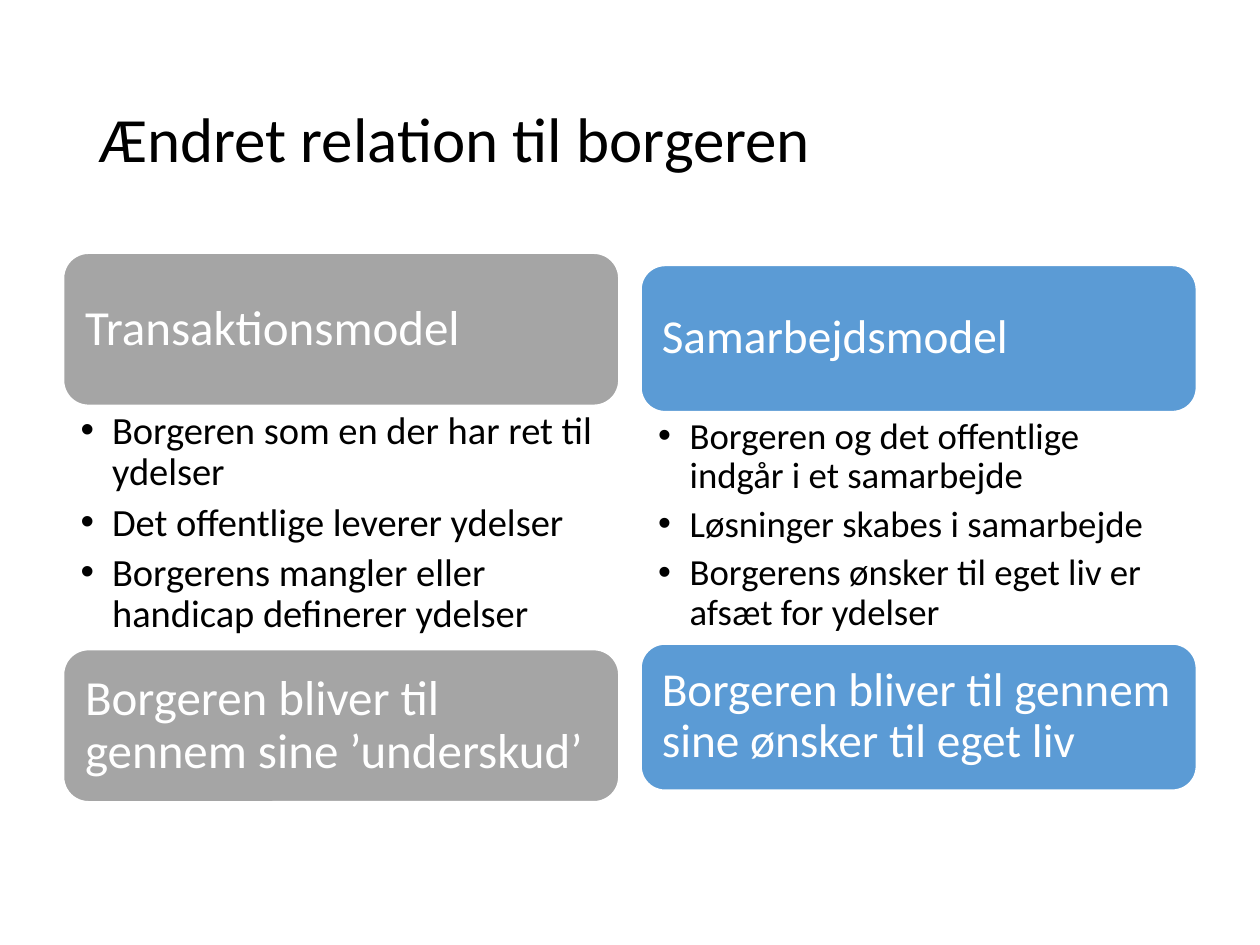
from lxml import etree
from pptx import Presentation
from pptx.dml.color import RGBColor
from pptx.enum.shapes import MSO_SHAPE
from pptx.enum.text import MSO_ANCHOR, PP_ALIGN
from pptx.oxml.ns import qn
from pptx.util import Pt

ROUND = MSO_SHAPE.ROUNDED_RECTANGLE
MID, TOP = MSO_ANCHOR.MIDDLE, MSO_ANCHOR.TOP
LEFT = PP_ALIGN.LEFT
FONT = "Calibri"
HUES = {"gray": "A5A5A5", "blue": "5B9BD5", "white": "FFFFFF", "black": "000000"}
WIDE = 318
MODELS = [
    {
        "x": 36, "y": 144.4, "bar": 87.6, "body": 138.9, "hue": "gray",
        "big": 28, "small": 22, "pad": 8.4, "right": 15.5,
        "head": "Transaktionsmodel",
        "points": [
            "Borgeren som en der har ret til ydelser",
            "Det offentlige leverer ydelser",
            "Borgerens mangler eller handicap definerer ydelser",
        ],
        "foot": "Borgeren bliver til gennem sine ’underskud’",
    },
    {
        "x": 366, "y": 151.4, "bar": 84.2, "body": 132.1, "hue": "blue",
        "big": 27, "small": 21, "pad": 8.1, "right": 15,
        "head": "Samarbejdsmodel",
        "points": [
            "Borgeren og det offentlige indgår i et samarbejde",
            "Løsninger skabes i samarbejde",
            "Borgerens ønsker til eget liv er afsæt for ydelser",
        ],
        "foot": "Borgeren bliver til gennem sine ønsker til eget liv",
    },
]


def color(name):
    """Return the named colour."""
    return RGBColor.from_string(HUES[name])


def apply(item, **values):
    """Set each format value on the item."""
    for key, value in values.items():
        setattr(item, key, value)


def bullet(para):
    """Give the paragraph a hanging bullet."""
    props = para._p.get_or_add_pPr()
    props.set("marL", str(Pt(18)))
    props.set("indent", str(-Pt(18)))
    etree.SubElement(props, qn("a:buFont")).set("typeface", "Arial")
    etree.SubElement(props, qn("a:buChar")).set("char", "•")


def write(para, text, size, hue, after=0):
    """Fill a paragraph with one formatted run."""
    apply(para, alignment=LEFT, line_spacing=0.9, space_after=Pt(after))
    run = para.add_run()
    apply(run, text=text)
    apply(run.font, name=FONT, size=Pt(size))
    run.font.color.rgb = color(hue)


def frame(shape, anchor, left, top, right):
    """Set the wrap, anchor and insets of a shape's text."""
    text = shape.text_frame
    apply(text, word_wrap=True, vertical_anchor=anchor,
          margin_left=Pt(left), margin_right=Pt(right),
          margin_top=Pt(top), margin_bottom=Pt(top))
    return text


def add_title(slide, text):
    """Place and format the slide title."""
    title = slide.shapes.title
    apply(title, left=Pt(49.5), top=Pt(28.8), width=Pt(621), height=Pt(104.4))
    write(frame(title, MID, 7.2, 3.6, 7.2).paragraphs[0], text, 36, "black")


def add_bar(shapes, model, y, text):
    """Add a rounded bar with its label."""
    bar = shapes.add_shape(ROUND, Pt(model["x"]), Pt(y), Pt(WIDE), Pt(model["bar"]))
    bar.shadow.inherit = False
    bar.fill.solid()
    bar.fill.fore_color.rgb = color(model["hue"])
    bar.line.color.rgb = color("white")
    bar.line.width = Pt(1.5)
    pad = model["pad"]
    write(frame(bar, MID, pad, pad, pad).paragraphs[0], text, model["big"], "white")


def add_list(shapes, model, y):
    """Add the bullet list of a model."""
    box = shapes.add_textbox(Pt(model["x"]), Pt(y), Pt(WIDE), Pt(model["body"]))
    text = frame(box, TOP, 10.1, 2.9, model["right"])
    for i, point in enumerate(model["points"]):
        para = text.add_paragraph() if i else text.paragraphs[0]
        para.level = 1
        bullet(para)
        write(para, point, model["small"], "black", 5)


def add_model(slide, model):
    """Stack heading, list and conclusion in one group."""
    shapes = slide.shapes.add_group_shape().shapes
    y = model["y"]
    add_bar(shapes, model, y, model["head"])
    y += model["bar"]
    add_list(shapes, model, y)
    add_bar(shapes, model, y + model["body"], model["foot"])


def main():
    """Build and save the slide."""
    deck = Presentation()
    apply(deck, slide_width=Pt(720), slide_height=Pt(540))
    slide = deck.slides.add_slide(deck.slide_layouts[5])
    add_title(slide, "Ændret relation til borgeren")
    for model in MODELS:
        add_model(slide, model)
    deck.save("out.pptx")


if __name__ == "__main__":
    main()
